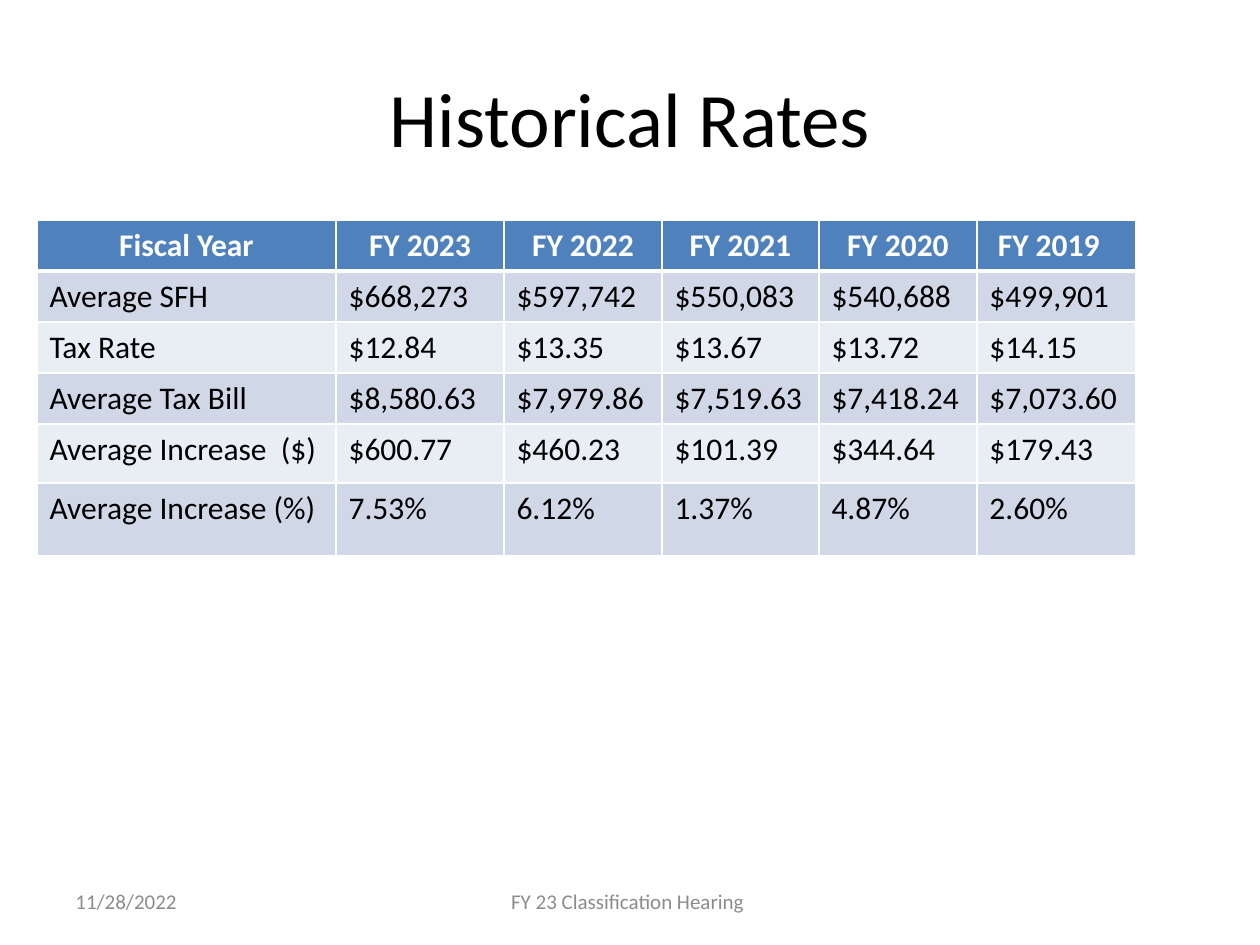
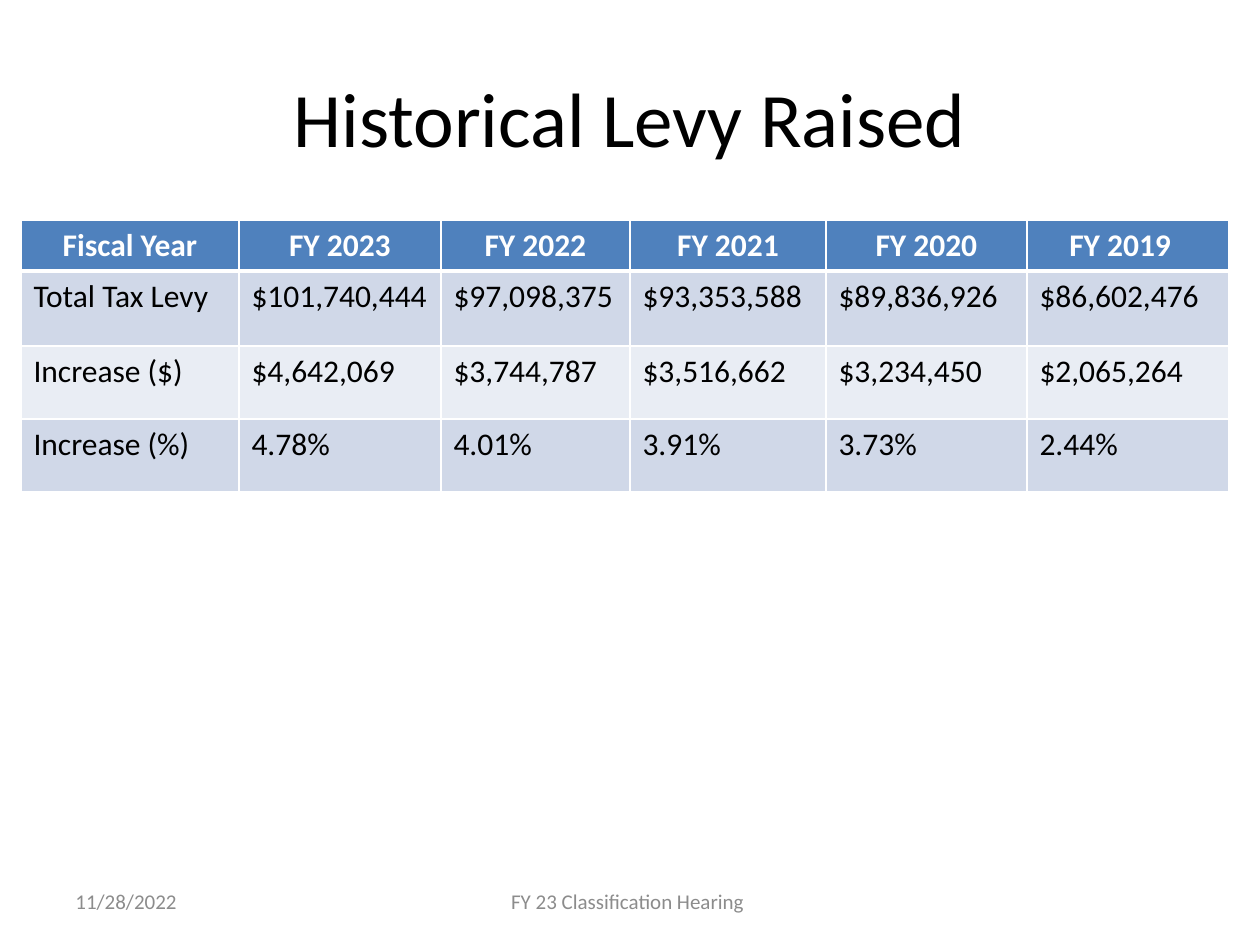
from lxml.etree import SubElement
from pptx import Presentation
from pptx.dml.color import RGBColor as RGB
from pptx.enum.text import MSO_ANCHOR as ANCHOR, PP_ALIGN as ALIGN
from pptx.oxml.ns import qn
from pptx.util import Emu, Pt

SCALE = 914400 / 126  # EMU in one px
TITLE_ONLY = 5
YEARS = ["FY 2023", "FY 2022", "FY 2021", "FY 2020", "FY 2019"]


def px(n):
    return Emu(round(n * SCALE))


def color(code):
    return RGB.from_string(code)


def set_values(target, values):
    for name, value in values.items():
        setattr(target, name, value)


class Deck:
    FONT = "Calibri"
    BLACK, WHITE, GREY = "000000", "FFFFFF", "8C8C8C"
    HEAD, BANDS = "4F81BD", ("D0D8E8", "E9EDF4")
    TITLE = dict(size=Pt(44), bold=False)
    HEADER = dict(size=Pt(18), bold=True)
    BODY = dict(size=Pt(18), bold=False)
    FOOTER = dict(size=Pt(12), bold=False)

    def __init__(self):
        self.prs = Presentation()
        set_values(self.prs, dict(slide_width=px(1260), slide_height=px(945)))
        self.slide = None

    def add_text(self, tf, text, font, ink, align):
        p = tf.paragraphs[0]
        p.alignment = align
        r = p.add_run()
        r.text = text
        set_values(r.font, dict(font, name=self.FONT))
        r.font.color.rgb = color(ink)

    def place(self, sp, left, top, width, height):
        set_values(sp, dict(left=px(left), top=px(top),
                            width=px(width), height=px(height)))

    def add_slide(self, title):
        layout = self.prs.slide_layouts[TITLE_ONLY]
        self.slide = self.prs.slides.add_slide(layout)
        sp = self.slide.shapes.title
        self.place(sp, 63, 38, 1134, 158)
        sp.text_frame.vertical_anchor = ANCHOR.MIDDLE
        self.add_text(sp.text_frame, title, self.TITLE, self.BLACK, ALIGN.CENTER)
        self.footer("11/28/2022", 63, 294, ALIGN.LEFT)
        self.footer("FY 23 Classification Hearing", 428, 399, ALIGN.CENTER)

    def footer(self, text, left, width, align):
        sp = self.slide.shapes.add_textbox(px(left), px(876), px(width), px(50))
        tf = sp.text_frame
        set_values(tf, dict(word_wrap=True, vertical_anchor=ANCHOR.MIDDLE))
        self.add_text(tf, text, self.FOOTER, self.GREY, align)

    def borders(self, cell, top, bottom):
        tcPr = cell._tc.get_or_add_tcPr()
        for side, width in zip("LRTB", (1, 1, top, bottom)):
            ln = SubElement(tcPr, qn(f"a:ln{side}"), w=str(Pt(width)))
            fill = SubElement(ln, qn("a:solidFill"))
            SubElement(fill, qn("a:srgbClr"), val=self.WHITE)

    def table(self, left, widths, heights, rows):
        rows = [["Fiscal Year", *YEARS], *rows]
        frame = self.slide.shapes.add_table(
            len(rows), len(widths), px(left), px(220),
            px(sum(widths)), px(sum(heights)))
        tbl = frame.table
        for col, width in zip(tbl.columns, widths):
            col.width = px(width)
        for i, (row, height) in enumerate(zip(rows, heights)):
            tbl.rows[i].height = px(height)
            for j, text in enumerate(row):
                self.cell(tbl.cell(i, j), i, text)
        # The last heading sits a little left of the column centre
        tbl.cell(0, len(widths) - 1).margin_right = px(28)

    def cell(self, cell, i, text):
        # A heavier rule separates the header from the body
        self.borders(cell, top=3 if i == 1 else 1, bottom=3 if i == 0 else 1)
        cell.fill.solid()
        if i == 0:
            fill, style = self.HEAD, (self.HEADER, self.WHITE, ALIGN.CENTER)
        else:
            fill = self.BANDS[(i - 1) % 2]
            style = (self.BODY, self.BLACK, ALIGN.LEFT)
        cell.fill.fore_color.rgb = color(fill)
        self.add_text(cell.text_frame, text, *style)


def main():
    deck = Deck()

    # Rates and bills for the average single-family home
    deck.add_slide("Historical Rates")
    deck.table(37, [299, 168, 158, 157, 158, 159], [51] * 4 + [59, 73], [
        ["Average SFH", "$668,273", "$597,742", "$550,083", "$540,688", "$499,901"],
        ["Tax Rate", "$12.84", "$13.35", "$13.67", "$13.72", "$14.15"],
        ["Average Tax Bill", "$8,580.63", "$7,979.86", "$7,519.63", "$7,418.24",
         "$7,073.60"],
        ["Average Increase  ($)", "$600.77", "$460.23", "$101.39", "$344.64",
         "$179.43"],
        ["Average Increase (%)", "7.53%", "6.12%", "1.37%", "4.87%", "2.60%"],
    ])

    # Total levy and its yearly growth
    deck.add_slide("Historical Levy Raised")
    deck.table(21, [218, 202, 189, 196, 201, 202], [51, 75, 73, 73], [
        ["Total Tax Levy", "$101,740,444", "$97,098,375", "$93,353,588",
         "$89,836,926", "$86,602,476"],
        ["Increase ($)", "$4,642,069", "$3,744,787", "$3,516,662", "$3,234,450",
         "$2,065,264"],
        ["Increase (%)", "4.78%", "4.01%", "3.91%", "3.73%", "2.44%"],
    ])

    deck.prs.save("out.pptx")


if __name__ == "__main__":
    main()
